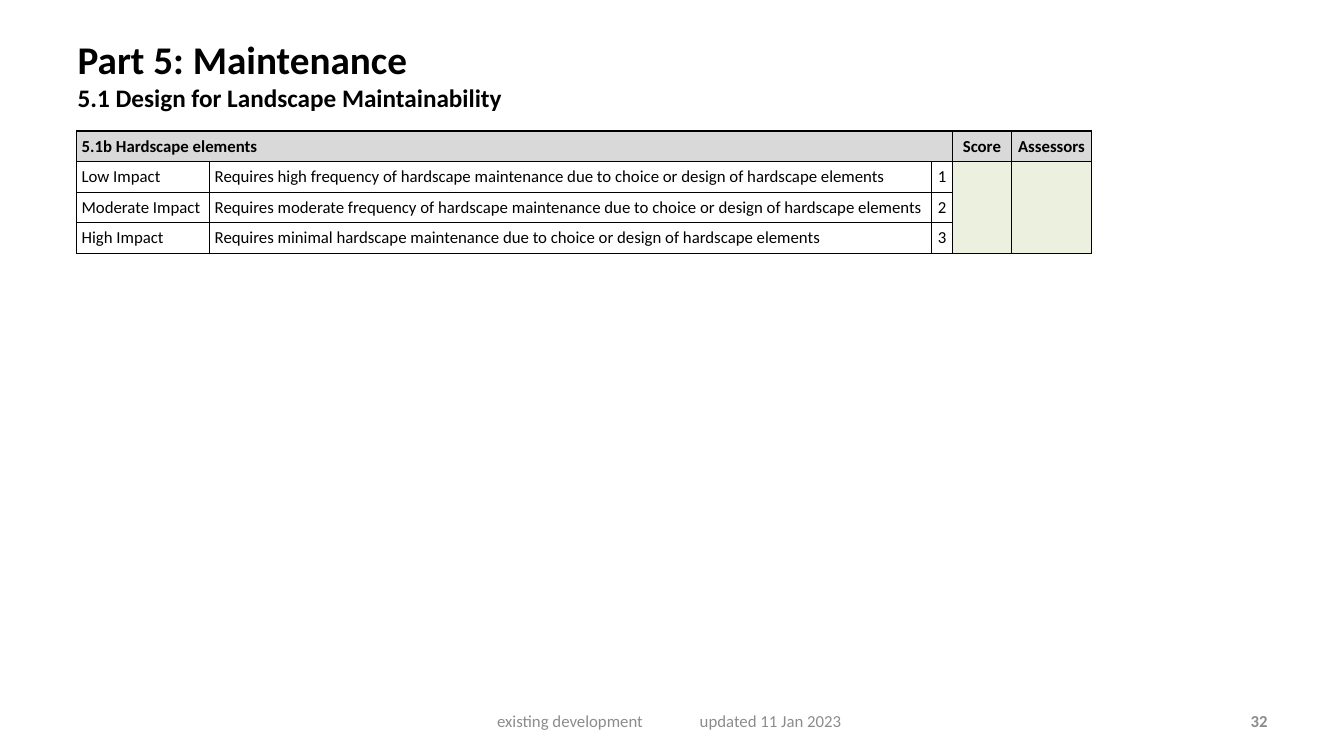
import dataclasses

import lxml.etree
import pptx
import pptx.dml.color
import pptx.enum.text
import pptx.oxml.ns
import pptx.util

Inches = pptx.util.Inches
Pt = pptx.util.Pt
qn = pptx.oxml.ns.qn
ALIGN = pptx.enum.text.PP_ALIGN
ANCHOR = pptx.enum.text.MSO_ANCHOR


@dataclasses.dataclass(frozen=True)
class Theme:
    font: str = "Calibri"
    title_size: int = 28
    subtitle_size: int = 18
    text_size: int = 12
    ink: str = "000000"
    muted: str = "8C8C8C"
    header_fill: str = "D9D9D9"
    score_fill: str = "EBF1DE"
    border_width: int = 1


def rgb(value):
    return pptx.dml.color.RGBColor.from_string(value)


class SlideBuilder:
    def __init__(self, prs, theme):
        self.theme = theme
        self.s = prs.slides.add_slide(prs.slide_layouts[5])

    def style(self, p, size, color, bold=False, align=ALIGN.LEFT):
        p.alignment = align
        p.font.name = self.theme.font
        p.font.size = Pt(size)
        p.font.bold = bold
        p.font.color.rgb = rgb(color)

    def title(self, box, heading, subheading):
        t = self.theme
        sp = self.s.shapes.title
        sp.left, sp.top, sp.width, sp.height = (Inches(v) for v in box)
        tf = sp.text_frame
        tf.auto_size = pptx.enum.text.MSO_AUTO_SIZE.NONE
        tf.vertical_anchor = ANCHOR.TOP
        p = tf.paragraphs[0]
        self.style(p, t.title_size, t.ink, bold=True)
        r = p.add_run()
        r.text, r.font.size = heading, Pt(t.title_size)
        p.add_line_break()
        br = p._p.find(qn("a:br"))
        lxml.etree.SubElement(br, qn("a:rPr"), sz=str(t.title_size * 100))
        r = p.add_run()
        r.text, r.font.size = subheading, Pt(t.subtitle_size)

    def footer(self, box, text, bold=False, align=ALIGN.LEFT, inset=0.1, tab=None):
        t = self.theme
        sp = self.s.shapes.add_textbox(*(Inches(v) for v in box))
        tf = sp.text_frame
        tf.word_wrap = True
        tf.vertical_anchor = ANCHOR.MIDDLE
        tf.margin_left = Inches(inset)
        p = tf.paragraphs[0]
        p.text = text
        if tab:
            tabs = lxml.etree.SubElement(p._p.get_or_add_pPr(), qn("a:tabLst"))
            lxml.etree.SubElement(tabs, qn("a:tab"), pos=str(Inches(tab)), algn="l")
        self.style(p, t.text_size, t.muted, bold, align)

    def border(self, cell):
        tc_pr = cell._tc.get_or_add_tcPr()
        for side in ("lnL", "lnR", "lnT", "lnB"):
            ln = lxml.etree.SubElement(
                tc_pr, qn(f"a:{side}"), w=str(Pt(self.theme.border_width)))
            fill = lxml.etree.SubElement(ln, qn("a:solidFill"))
            lxml.etree.SubElement(fill, qn("a:srgbClr"), val=self.theme.ink)

    def cell(self, cell, text, fill, bold, align):
        t = self.theme
        self.border(cell)
        if fill:
            cell.fill.solid()
            cell.fill.fore_color.rgb = rgb(fill)
        else:
            cell.fill.background()
        cell.margin_left = cell.margin_right = Inches(0.05)
        cell.margin_top = cell.margin_bottom = Inches(0.05)
        cell.vertical_anchor = ANCHOR.MIDDLE
        p = cell.text_frame.paragraphs[0]
        p.text = text
        self.style(p, t.text_size, t.ink, bold, align)
        # Empty cells keep the small type, so that rows do not grow.
        p._p.get_or_add_endParaRPr().set("sz", str(t.text_size * 100))

    def score_table(self, left, top, widths, row_height, rows):
        """Table with a header row, three text columns and two score columns."""
        t = self.theme
        frame = self.s.shapes.add_table(
            len(rows), len(widths), Inches(left), Inches(top),
            Inches(sum(widths)), Inches(row_height * len(rows)))
        table = frame.table
        table.first_row = table.horz_banding = False
        for column, width in zip(table.columns, widths):
            column.width = Inches(width)
        for i, row in enumerate(rows):
            for j, text in enumerate(row):
                header, score = i == 0, j >= 3
                fill = t.header_fill if header else t.score_fill if score else None
                align = ALIGN.CENTER if j >= 2 else ALIGN.LEFT
                self.cell(table.cell(i, j), text, fill, header, align)
        table.cell(0, 0).merge(table.cell(0, 2))
        for j in (3, 4):
            table.cell(1, j).merge(table.cell(len(rows) - 1, j))


IMPACTS = [
    ("Low Impact", "high frequency of hardscape"),
    ("Moderate Impact", "moderate frequency of hardscape"),
    ("High Impact", "minimal hardscape"),
]


def main():
    prs = pptx.Presentation()
    prs.slide_width, prs.slide_height = Inches(13.33), Inches(7.5)
    slide = SlideBuilder(prs, Theme())
    slide.title((0.67, 0.3, 10.36, 0.99), "Part 5: Maintenance",
                "5.1 Design for Landscape Maintainability")
    rows = [("5.1b Hardscape elements", "", "", "Score", "Assessors")]
    for score, (impact, need) in enumerate(IMPACTS, 1):
        reason = f"Requires {need} maintenance due to choice or design of hardscape elements"
        rows.append((impact, reason, str(score), "", ""))
    slide.score_table(0.76, 1.3, (1.32, 7.16, 0.21, 0.58, 0.8), 0.3, rows)
    slide.footer((4.56, 6.95, 4.22, 0.4),
                 "existing development\tupdated 11 Jan 2023", inset=0.37, tab=2.01)
    slide.footer((9.56, 6.95, 3.11, 0.4), "32", bold=True, align=ALIGN.RIGHT)
    prs.save("out.pptx")


if __name__ == "__main__":
    main()
